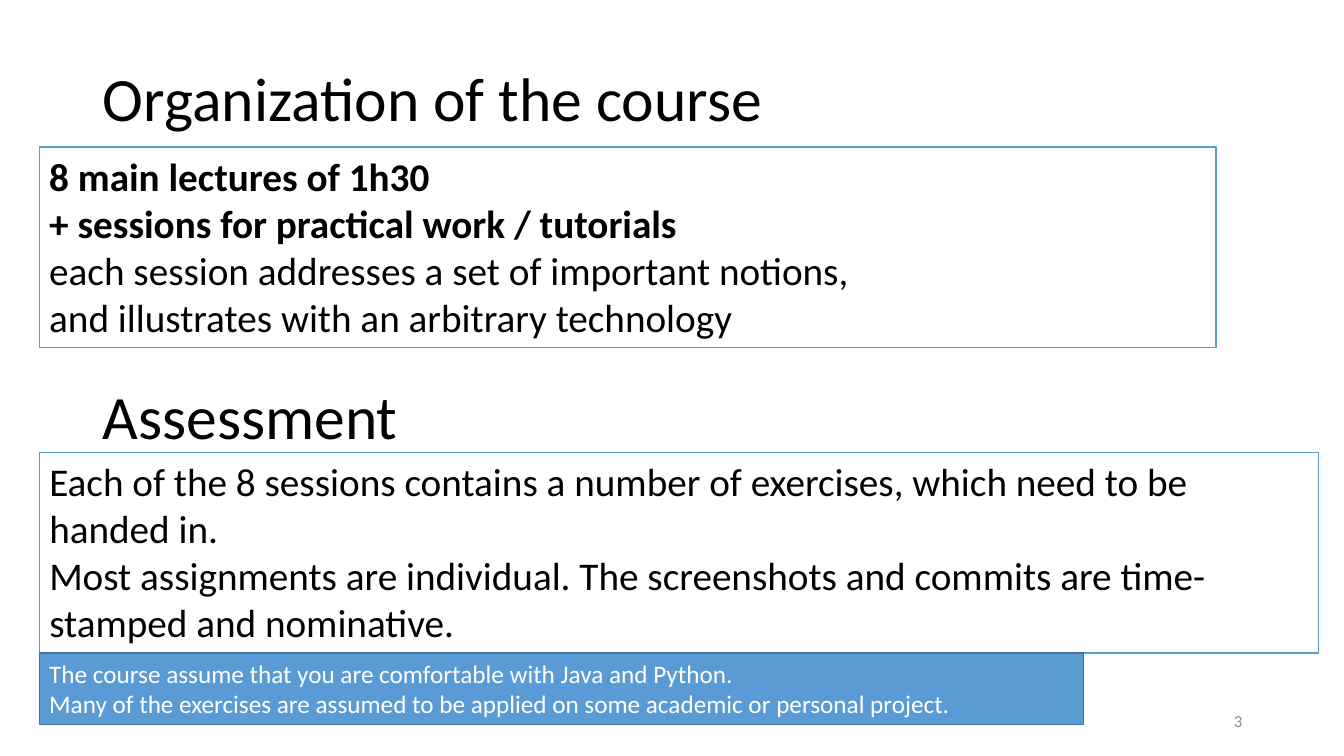
from pptx import Presentation
from pptx.dml.color import RGBColor
from pptx.enum.shapes import MSO_SHAPE
from pptx.enum.text import MSO_ANCHOR, MSO_AUTO_SIZE, PP_ALIGN
from pptx.util import Inches, Pt

RECTANGLE = MSO_SHAPE.RECTANGLE
TOP, MIDDLE = MSO_ANCHOR.TOP, MSO_ANCHOR.MIDDLE
LEFT, RIGHT = PP_ALIGN.LEFT, PP_ALIGN.RIGHT
NO_AUTOFIT = MSO_AUTO_SIZE.NONE
GROW = MSO_AUTO_SIZE.SHAPE_TO_FIT_TEXT
TITLE_ONLY = 5
FONT = "Calibri"
BLACK, WHITE, GREY = "000000", "FFFFFF", "8C8C8C"
BLUE, DARK_BLUE = "5B9BD5", "43739E"
BOX_LEFT = 0.39
HEADING_LEFT, HEADING_WIDTH, HEADING_HEIGHT = 0.92, 11.5, 1.45


def color(hex_string):
    return RGBColor.from_string(hex_string)


def place(shape, left, top, width, height):
    shape.left, shape.top = Inches(left), Inches(top)
    shape.width, shape.height = Inches(width), Inches(height)


def write(shape, lines, size, font_color, anchor=MIDDLE, align=LEFT,
          spacing=1.0, bold_lines=0, auto_size=NO_AUTOFIT):
    frame = shape.text_frame
    frame.text = "\n".join(lines)
    frame.word_wrap = True
    frame.auto_size = auto_size
    frame.vertical_anchor = anchor
    for index, paragraph in enumerate(frame.paragraphs):
        paragraph.alignment = align
        paragraph.line_spacing = spacing
        font = paragraph.font
        font.name = FONT
        font.size = Pt(size)
        font.bold = index < bold_lines
        font.color.rgb = color(font_color)


def format_heading(shape, text, top):
    place(shape, HEADING_LEFT, top, HEADING_WIDTH, HEADING_HEIGHT)
    write(shape, [text], 44, BLACK, spacing=0.9)


def add_box(slide, top, width, height, lines, size=28, fill=WHITE,
            line=BLUE, font_color=BLACK, bold_lines=0):
    box = slide.shapes.add_shape(RECTANGLE, Inches(BOX_LEFT), Inches(top),
                                 Inches(width), Inches(height))
    box.shadow.inherit = False
    box.fill.solid()
    box.fill.fore_color.rgb = color(fill)
    box.line.color.rgb = color(line)
    box.line.width = Pt(1)
    write(box, lines, size, font_color, anchor=TOP, bold_lines=bold_lines,
          auto_size=GROW)


def add_text_box(slide):
    return slide.shapes.add_textbox(0, 0, Inches(1), Inches(1))


def main():
    presentation = Presentation()
    presentation.slide_width = Inches(13.33)
    presentation.slide_height = Inches(7.5)
    slide = presentation.slides.add_slide(
        presentation.slide_layouts[TITLE_ONLY])

    format_heading(slide.shapes.title, "Organization of the course", 0.28)
    slide_number = add_text_box(slide)
    place(slide_number, 9.42, 6.95, 3, 0.4)
    write(slide_number, ["3"], 12, GREY, align=RIGHT)

    add_box(slide, 1.46, 11.67, 1.99, [
        "8 main lectures of 1h30",
        "+ sessions for practical work / tutorials",
        "each session addresses a set of important notions,",
        "and illustrates with an arbitrary technology",
    ], bold_lines=2)

    format_heading(add_text_box(slide), "Assessment", 3.44)
    add_box(slide, 4.49, 12.69, 1.99, [
        "Each of the 8 sessions contains a number of exercises, "
        "which need to be handed in.",
        "Most assignments are individual. The screenshots and commits "
        "are time-stamped and nominative.",
    ])
    add_box(slide, 6.48, 10.36, 0.71, [
        "The course assume that you are comfortable with Java and Python.",
        "Many of the exercises are assumed to be applied on some academic "
        "or personal project.",
    ], size=18, fill=BLUE, line=DARK_BLUE, font_color=WHITE)

    presentation.save("out.pptx")


if __name__ == "__main__":
    main()
